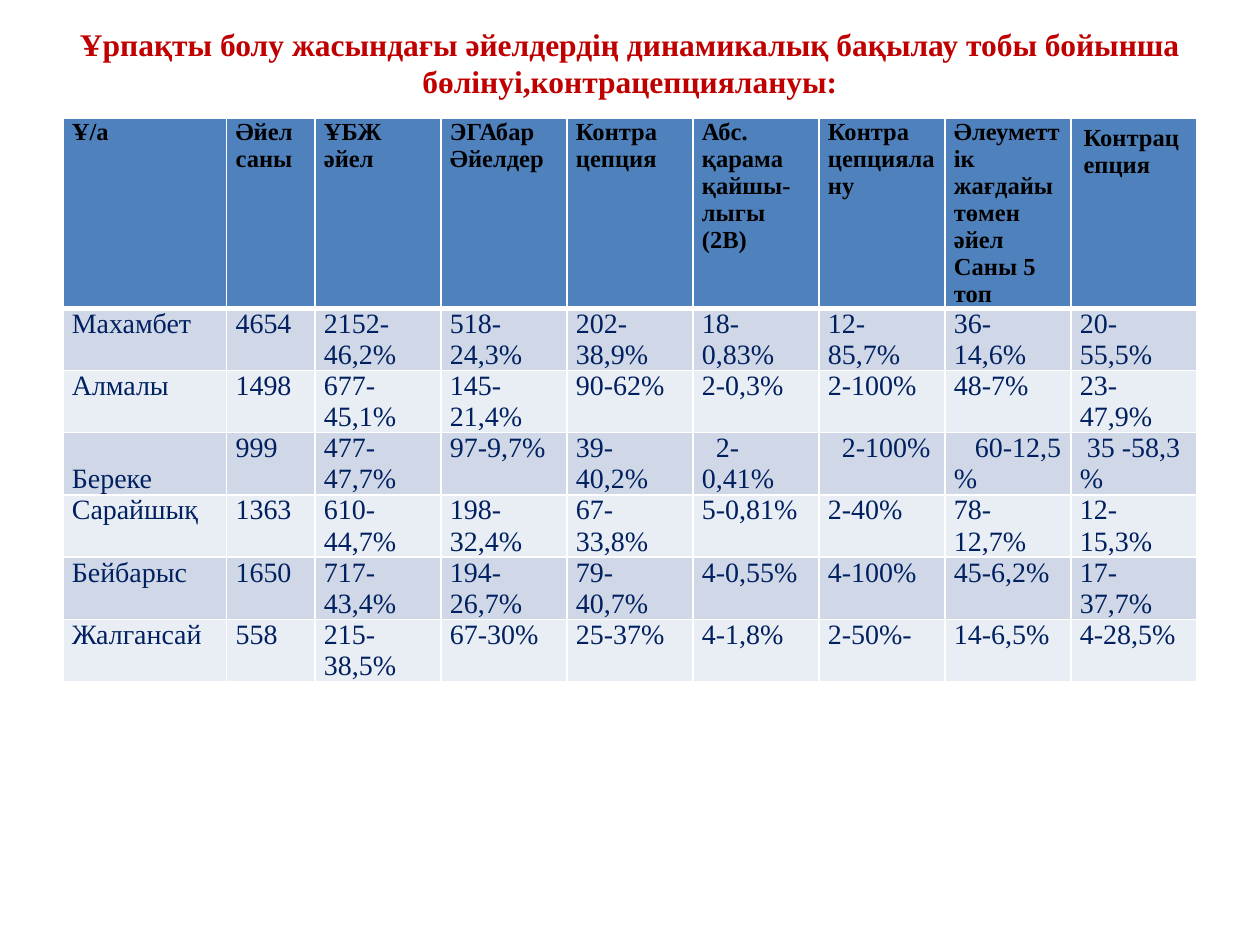
import dataclasses

import lxml.etree
import pptx
import pptx.dml.color
import pptx.enum.text
import pptx.oxml.ns
import pptx.util

Cm, Pt = pptx.util.Cm, pptx.util.Pt
RGB = pptx.dml.color.RGBColor.from_string
ANCHOR = pptx.enum.text.MSO_ANCHOR
qn = pptx.oxml.ns.qn


@dataclasses.dataclass(frozen=True)
class Theme:
    font: str = "Times New Roman"
    title: str = "C00000"
    header_text: str = "000000"
    body_text: str = "002060"
    header_fill: str = "4F81BD"
    bands: tuple = ("D0D8E8", "E9EDF4")
    border: str = "FFFFFF"
    title_size: int = 18
    header_size: int = 14
    body_size: int = 16


THEME = Theme()

TITLE = ("Ұрпақты болу жасындағы әйелдердің динамикалық бақылау тобы бойынша "
         "бөлінуі,контрацепциялануы:")
# "\n" starts a paragraph, "\v" breaks a line
HEADERS = ["Ұ/а", "Әйел\nсаны", "ҰБЖ\nәйел", "ЭГАбар\nӘйелдер", "Контра\vцепция",
           "Абс.\nқарама\nқайшы-\nлыгы\n(2В)", "Контра\vцепциялану",
           "Әлеуметтік жағдайы төмен әйел\nСаны 5 топ", "Контрацепция"]
ROWS = [
    ["Махамбет", "4654", "2152-46,2%", "518-24,3%", "202-38,9%", "18-0,83%",
     "12-85,7%", "36-14,6%", "20-55,5%"],
    ["Алмалы", "1498", "677-45,1%", "145-21,4%", "90-62%", "2-0,3%",
     "2-100%", "48-7%", "23-47,9%"],
    ["Береке", "999", "477-47,7%", "97-9,7%", "39-40,2%", "2-0,41%",
     "2-100%", "60-12,5 %", "35 -58,3 %"],
    ["Сарайшық", "1363", "610-44,7%", "198-32,4%", "67-33,8%", "5-0,81%",
     "2-40%", "78-12,7%", "12-15,3%"],
    ["Бейбарыс", "1650", "717-43,4%", "194-26,7%", "79-40,7%", "4-0,55%",
     "4-100%", "45-6,2%", "17-37,7%"],
    ["Жалгансай", "558", "215-38,5%", "67-30%", "25-37%", "4-1,8%",
     "2-50%-", "14-6,5%", "4-28,5%"],
]
COLUMN_WIDTHS = [3.3, 1.78] + [2.54] * 7
ROW_HEIGHT = 1.04
BEREKE_ROW = 3
BEREKE_INDENTS = {5: 8, 6: 8, 7: 12, 8: 4}  # column: first-line indent, pt


def set_all(obj, values):
    for name, value in values.items():
        setattr(obj, name, value)


def format_text(tf, size, color, bold):
    for p in tf.paragraphs:
        for r in p.runs:
            set_all(r.font, {"name": THEME.font, "size": Pt(size), "bold": bold})
            r.font.color.rgb = RGB(color)


def set_borders(cell, widths):
    tc_pr = cell._tc.get_or_add_tcPr()
    for side, width in widths.items():
        ln = lxml.etree.SubElement(tc_pr, qn(f"a:ln{side}"), w=str(Pt(width)))
        fill = lxml.etree.SubElement(ln, qn("a:solidFill"))
        lxml.etree.SubElement(fill, qn("a:srgbClr"), val=THEME.border)


def add_title(slide, left, top, width, height):
    s = slide.shapes.title
    set_all(s, {"left": Cm(left), "top": Cm(top), "width": Cm(width), "height": Cm(height)})
    tf = s.text_frame
    tf.text = TITLE
    # The bottom margin keeps the heading clear of the table
    set_all(tf, {"word_wrap": True, "auto_size": pptx.enum.text.MSO_AUTO_SIZE.NONE,
                 "vertical_anchor": ANCHOR.BOTTOM, "margin_top": 0, "margin_bottom": Cm(0.57)})
    tf.paragraphs[0].alignment = pptx.enum.text.PP_ALIGN.CENTER
    format_text(tf, THEME.title_size, THEME.title, True)


def fill_cell(cell, text, row, column):
    header = row == 0
    cell.text = text
    # The last heading keeps the default cell margins
    if not (header and column == len(HEADERS) - 1):
        set_all(cell, {"margin_left": Cm(0.18), "margin_right": Cm(0.18),
                       "margin_top": 0, "margin_bottom": 0})
    set_borders(cell, {"L": 1, "R": 1, "T": 3 if row == 1 else 1, "B": 3 if header else 1})
    cell.fill.solid()
    cell.fill.fore_color.rgb = RGB(THEME.header_fill if header else THEME.bands[(row - 1) % 2])
    if header:
        format_text(cell.text_frame, THEME.header_size, THEME.header_text, True)
    else:
        format_text(cell.text_frame, THEME.body_size, THEME.body_text, False)


def add_district_table(slide, left, top, width, height):
    data = [HEADERS] + ROWS
    s = slide.shapes.add_table(len(data), len(HEADERS), Cm(left), Cm(top), Cm(width), Cm(height))
    table = s.table
    for column, column_width in zip(table.columns, COLUMN_WIDTHS):
        column.width = Cm(column_width)
    for row in table.rows:
        row.height = Cm(ROW_HEIGHT)
    s.height = Cm(height)
    for i, texts in enumerate(data):
        for j, text in enumerate(texts):
            fill_cell(table.cell(i, j), text, i, j)

    # The Береке row has its own alignment and indents
    table.cell(BEREKE_ROW, 0).vertical_anchor = ANCHOR.BOTTOM
    for j, indent in BEREKE_INDENTS.items():
        p = table.cell(BEREKE_ROW, j).text_frame.paragraphs[0]
        p._p.get_or_add_pPr().set("indent", str(Pt(indent)))


def main():
    prs = pptx.Presentation()
    set_all(prs, {"slide_width": Cm(25.4), "slide_height": Cm(19.05)})
    slide = prs.slides.add_slide(prs.slide_layouts[5])
    add_title(slide, 1.27, 0.76, 22.86, 1.83)
    add_district_table(slide, 1.27, 2.39, 22.86, 12.27)
    prs.save("out.pptx")


if __name__ == "__main__":
    main()
